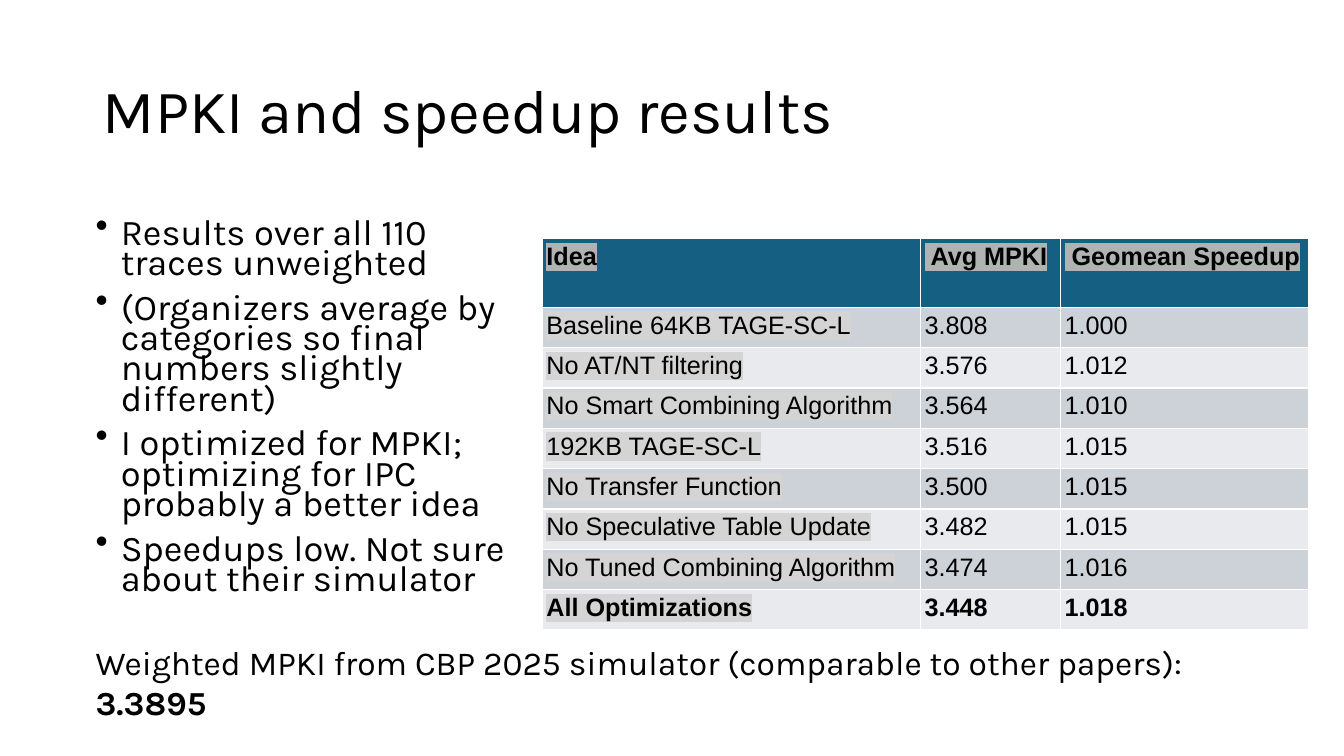
from dataclasses import dataclass

from lxml import etree
from pptx import Presentation
from pptx.dml.color import RGBColor
from pptx.enum.text import MSO_ANCHOR, PP_ALIGN
from pptx.oxml.ns import qn
from pptx.util import Pt

LEFT = PP_ALIGN.LEFT
MIDDLE = MSO_ANCHOR.MIDDLE
TITLE_ONLY = 5
SCALE = 9144  # EMU in one px, 100 px to the inch


@dataclass(frozen=True)
class Theme:
    sans: str = "Karla"
    grid: str = "Arial"
    ink: str = "000000"
    head: str = "156082"
    bands: tuple = ("CCD2D8", "E8EAED")
    mark: str = "D4D4D4"
    headmark: str = "B0B3B2"
    title: float = 44
    body: float = 25.9
    cell: float = 18
    note: float = 24


THEME = Theme()

POINTS = [
    "Results over all 110 traces unweighted",
    "(Organizers average by categories so final numbers slightly different)",
    "I optimized for MPKI; optimizing for IPC probably a better idea",
    "Speedups low. Not sure about their simulator",
]
RESULTS = [
    ("Idea", " Avg MPKI", " Geomean Speedup"),
    ("Baseline 64KB TAGE-SC-L", "3.808", "1.000"),
    ("No AT/NT filtering", "3.576", "1.012"),
    ("No Smart Combining Algorithm", "3.564", "1.010"),
    ("192KB TAGE-SC-L", "3.516", "1.015"),
    ("No Transfer Function", "3.500", "1.015"),
    ("No Speculative Table Update", "3.482", "1.015"),
    ("No Tuned Combining Algorithm", "3.474", "1.016"),
    ("All Optimizations", "3.448", "1.018"),
]


def px(n):
    return n * SCALE


def style(para, size, face=THEME.sans, bold=None):
    para.alignment = LEFT
    font = para.font
    font.size, font.name, font.bold = Pt(size), face, bold
    font.color.rgb = RGBColor.from_string(THEME.ink)


def mark(run, color):
    tag = etree.SubElement(run.font._element, qn("a:highlight"))
    etree.SubElement(tag, qn("a:srgbClr"), val=color)


def bullet(para):
    props = para._p.get_or_add_pPr()
    props.set("marL", str(px(25)))
    props.set("indent", str(px(-25)))
    # The bullet goes ahead of the default run properties
    sign = etree.Element(qn("a:buChar"), char="•")
    props.find(qn("a:defRPr")).addprevious(sign)


def add_box(slide, box):
    frame = slide.shapes.add_textbox(*map(px, box)).text_frame
    frame.word_wrap = True
    return frame


def add_title(slide, box, text):
    title = slide.shapes.title
    title.left, title.top, title.width, title.height = map(px, box)
    frame = title.text_frame
    frame.text = text
    frame.vertical_anchor = MIDDLE
    para = frame.paragraphs[0]
    para.line_spacing = 0.9
    style(para, THEME.title)


def add_points(slide, box, points):
    frame = add_box(slide, box)
    frame.text = "\n".join(points)
    for para in frame.paragraphs:
        para.line_spacing = 0.7
        para.space_before = Pt(10)
        style(para, THEME.body)
        bullet(para)


def fill_cell(cell, text, fill, bold, tint):
    cell.fill.solid()
    cell.fill.fore_color.rgb = RGBColor.from_string(fill)
    cell.margin_left = cell.margin_right = px(4)
    cell.margin_top = cell.margin_bottom = px(4)
    para = cell.text_frame.paragraphs[0]
    run = para.add_run()
    run.text = text
    style(para, THEME.cell, THEME.grid, bold)
    if tint:
        mark(run, tint)


def add_results(slide, box, rows, widths, heights):
    frame = slide.shapes.add_table(len(rows), len(widths), *map(px, box))
    table = frame.table
    for col, width in zip(table.columns, widths):
        col.width = px(width)
    last = len(rows) - 1
    for r, row in enumerate(rows):
        head = r == 0
        table.rows[r].height = px(heights[0] if head else heights[1])
        fill = THEME.head if head else THEME.bands[(r - 1) % 2]
        for c, text in enumerate(row):
            tint = THEME.headmark if head else THEME.mark if c == 0 else None
            fill_cell(table.cell(r, c), text, fill, r in (0, last), tint)


def add_note(slide, box, label, value):
    para = add_box(slide, box).paragraphs[0]
    style(para, THEME.note)
    para.add_run().text = label
    run = para.add_run()
    run.text = value
    run.font.bold = True


def main():
    deck = Presentation()
    deck.slide_width, deck.slide_height = px(1333), px(750)
    slide = deck.slides.add_slide(deck.slide_layouts[TITLE_ONLY])
    add_title(slide, (92, 40, 1150, 145), "MPKI and speedup results")
    add_points(slide, (85, 214, 430, 415), POINTS)
    add_results(slide, (538, 237, 760, 392), RESULTS, (375, 139, 246), (68, 40))
    add_note(slide, (85, 632, 1160, 90),
             "Weighted MPKI from CBP 2025 simulator (comparable to other papers): ",
             "3.3895")
    deck.save("out.pptx")


if __name__ == "__main__":
    main()
